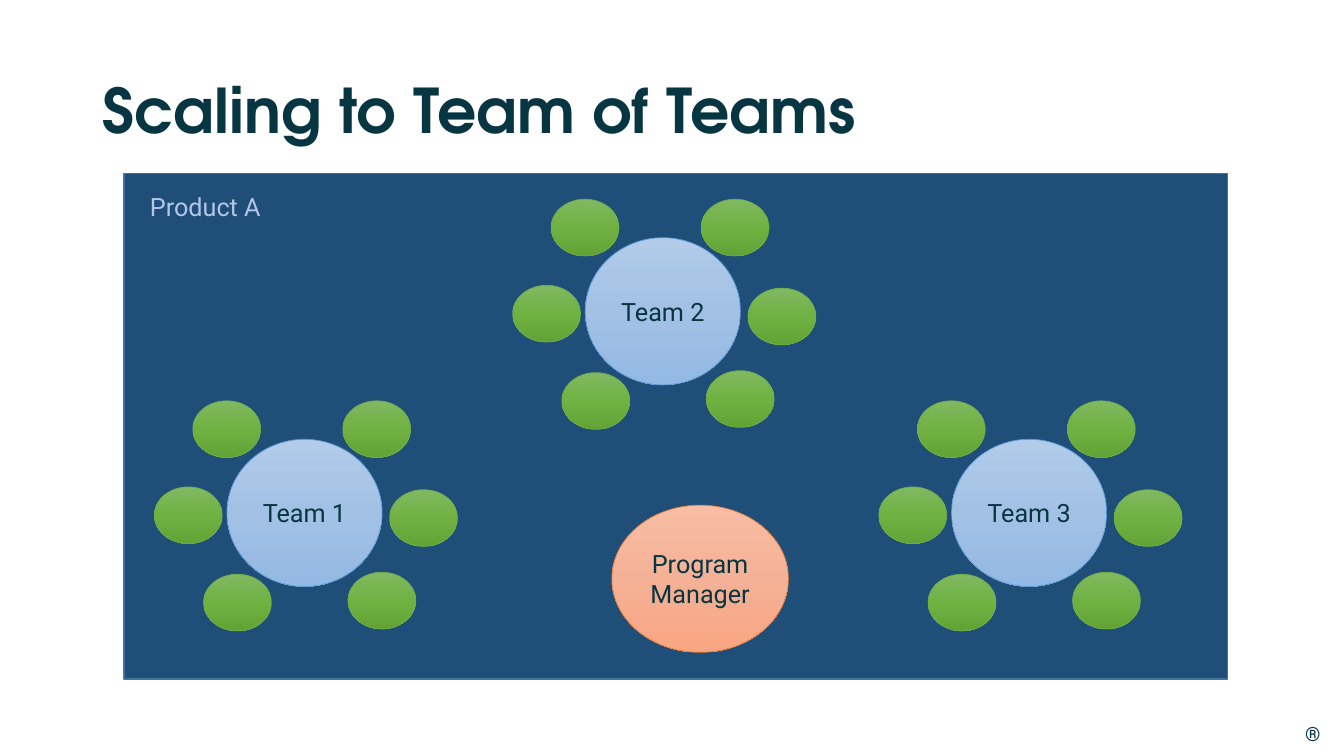
"""Build the slide that scales one product to a team of teams."""
from copy import deepcopy
from dataclasses import dataclass

from pptx import Presentation
from pptx import util as u
from pptx.dml.color import RGBColor
from pptx.enum import shapes, text
from pptx.oxml.ns import qn


@dataclass(frozen=True)
class Theme:
    ink: str = "073642"
    panel: str = "1F4E79"
    panel_edge: str = "43739E"
    label: str = "B4C7E7"
    heading_font: str = "TeX Gyre Adventor"
    body_font: str = "Roboto"
    heading_size: int = 44
    body_size: int = 18
    mark_size: int = 14


@dataclass(frozen=True)
class Frame:
    left: float
    top: float
    width: float
    height: float

    def lengths(self) -> tuple:
        return tuple(u.Cm(n) for n in (self.left, self.top, self.width, self.height))


@dataclass(frozen=True)
class Paint:
    stops: tuple[str, str, str]
    edge: str


@dataclass(frozen=True)
class Team:
    name: str
    left: float
    top: float


THEME = Theme()
TEAM_PAINT = Paint(("B1CBE9", "A3C1E5", "93B9E4"), "5B9BD5")
MEMBER_PAINT = Paint(("81B861", "6FB242", "62A336"), "70AD47")
MANAGER_PAINT = Paint(("F7BDA5", "F5B196", "F8A582"), "ED7D31")
TEAMS = (Team("Team 1", 5.72, 11.07), Team("Team 3", 23.98, 11.07), Team("Team 2", 14.75, 5.99))
TEAM_SIZE = (3.91, 3.71)
MEMBER_SIZE = (1.71, 1.43)
MEMBER_OFFSETS = ((2.92, -0.97), (3.05, 3.35), (-0.59, 3.4),
                  (-0.86, -0.97), (4.1, 1.27), (-1.83, 1.2))


def style(para, size: int, color: str, face: str = THEME.body_font) -> None:
    para.font.size = u.Pt(size)
    para.font.name = face
    para.font.color.rgb = RGBColor.from_string(color)


def paint_gradient(shape, paint: Paint) -> None:
    shape.fill.gradient()
    shape.fill.gradient_angle = 270
    first = shape._element.spPr.find(f".//{qn('a:gs')}")
    first.addnext(deepcopy(first))
    for stop, color, position in zip(shape.fill.gradient_stops, paint.stops, (0, 0.5, 1)):
        stop.color.rgb = RGBColor.from_string(color)
        stop.position = position


def outline(shape, color: str, width: float) -> None:
    shape.shadow.inherit = False
    shape.line.color.rgb = RGBColor.from_string(color)
    shape.line.width = u.Pt(width)


def add_ellipse(parent, frame: Frame, paint: Paint, words: str = "") -> None:
    ellipse = parent.add_shape(shapes.MSO_SHAPE.OVAL, *frame.lengths())
    paint_gradient(ellipse, paint)
    outline(ellipse, paint.edge, 0.5)
    if words:
        ellipse.text_frame.text = words
        ellipse.text_frame.vertical_anchor = text.MSO_ANCHOR.MIDDLE
        para = ellipse.text_frame.paragraphs[0]
        para.alignment = text.PP_ALIGN.CENTER
        style(para, THEME.body_size, THEME.ink)


def add_team(page, team: Team) -> None:
    group = page.shapes.add_group_shape()
    add_ellipse(group.shapes, Frame(team.left, team.top, *TEAM_SIZE), TEAM_PAINT, team.name)
    for across, down in MEMBER_OFFSETS:
        member = Frame(team.left + across, team.top + down, *MEMBER_SIZE)
        add_ellipse(group.shapes, member, MEMBER_PAINT)


def add_panel(page, frame: Frame) -> None:
    panel = page.shapes.add_shape(shapes.MSO_SHAPE.RECTANGLE, *frame.lengths())
    panel.fill.solid()
    panel.fill.fore_color.rgb = RGBColor.from_string(THEME.panel)
    outline(panel, THEME.panel_edge, 1)


def add_title(page, frame: Frame, words: str) -> None:
    title = page.shapes.title
    title.left, title.top, title.width, title.height = frame.lengths()
    box = title.text_frame
    box.text = words
    box.auto_size = text.MSO_AUTO_SIZE.NONE
    box.vertical_anchor = text.MSO_ANCHOR.MIDDLE
    para = box.paragraphs[0]
    para.alignment = text.PP_ALIGN.LEFT
    para.line_spacing = 0.9
    style(para, THEME.heading_size, THEME.ink, THEME.heading_font)
    para.font.bold = True


def add_text(page, frame: Frame, words: str, size: int, color: str):
    box = page.shapes.add_textbox(*frame.lengths()).text_frame
    box.word_wrap = True
    box.text = words
    style(box.paragraphs[0], size, color)
    return box


def main() -> None:
    deck = Presentation()
    deck.slide_width, deck.slide_height = u.Cm(33.87), u.Cm(19.05)
    page = deck.slides.add_slide(deck.slide_layouts.get_by_name("Title Only"))
    mark = add_text(page, Frame(32.89, 18.19, 0.46, 0.61), "®", THEME.mark_size, THEME.ink)
    mark.margin_left = mark.margin_right = mark.margin_top = mark.margin_bottom = 0
    mark.word_wrap = False
    add_panel(page, Frame(3.13, 4.38, 27.81, 12.73))
    add_title(page, Frame(2.33, 1.01, 29.21, 3.68), "Scaling to Team of Teams")
    for team in TEAMS:
        add_team(page, team)
    add_ellipse(page.shapes, Frame(15.42, 12.73, 4.45, 3.71), MANAGER_PAINT, "Program Manager")
    add_text(page, Frame(3.53, 4.7, 6.3, 1.03), "Product A", THEME.body_size, THEME.label)
    deck.save("out.pptx")


if __name__ == "__main__":
    main()
